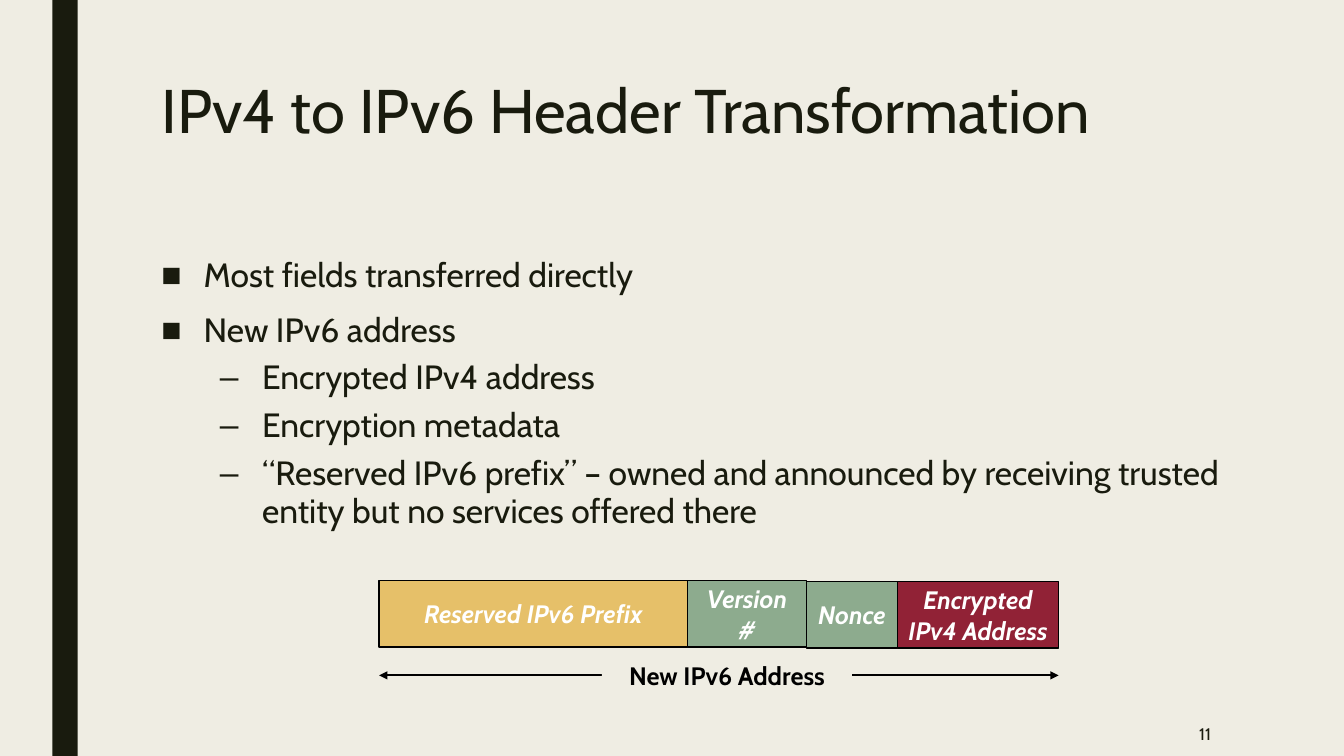
from dataclasses import dataclass

from lxml.etree import SubElement
from pptx import Presentation
from pptx.dml.color import RGBColor
from pptx.enum.shapes import MSO_CONNECTOR, MSO_SHAPE
from pptx.enum.text import MSO_ANCHOR, MSO_AUTO_SIZE, PP_ALIGN
from pptx.oxml.ns import qn
from pptx.util import Inches, Pt


@dataclass(frozen=True)
class Theme:
    font: str = "Cabin"
    paper: str = "EFEDE3"
    ink: str = "191B0E"
    black: str = "000000"
    white: str = "FFFFFF"
    gold: str = "E6C069"
    green: str = "8DAB8E"
    red: str = "912236"
    title: int = 44
    body: int = 24
    label: int = 18
    number: int = 12


THEME = Theme()

BULLETS = [
    (0, "Most fields transferred directly"),
    (0, "New IPv6 address"),
    (1, "Encrypted IPv4 address"),
    (1, "Encryption metadata"),
    (1, "“Reserved IPv6 prefix” – owned and announced by receiving trusted "
        "entity but no services offered there"),
]
# Per level: bullet character, left margin (in), space before (pt)
LEVELS = [("■", 0.42, 10), ("–", 1, 5)]
HANGING = 0.42

# Address fields: text, width, drop below the row top, fill
FIELDS = [
    ("Reserved IPv6 Prefix", 3.06, 0, THEME.gold),
    ("Version #", 1.18, 0, THEME.green),
    ("Nonce", 0.9, 0.01, THEME.green),
    ("Encrypted IPv4 Address", 1.6, 0.01, THEME.red),
]


def color(value):
    return RGBColor.from_string(value)


def add_run(p, text, size, ink, bold=False, italic=False):
    r = p.add_run()
    r.text = text
    r.font.name = THEME.font
    r.font.size = Pt(size)
    r.font.bold = bold
    r.font.italic = italic
    r.font.color.rgb = color(ink)


def place(sp, box):
    sp.left, sp.top, sp.width, sp.height = (Inches(v) for v in box)


def prepare_text(sp, anchor=MSO_ANCHOR.TOP):
    tf = sp.text_frame
    tf.word_wrap = True
    tf.auto_size = MSO_AUTO_SIZE.NONE
    tf.vertical_anchor = anchor
    return tf


def add_rect(s, box, fill, outline=None):
    sp = s.shapes.add_shape(MSO_SHAPE.RECTANGLE, *(Inches(v) for v in box))
    sp.shadow.inherit = False
    sp.fill.solid()
    sp.fill.fore_color.rgb = color(fill)
    if outline:
        sp.line.color.rgb = color(outline)
        sp.line.width = Pt(1)
    else:
        sp.line.fill.background()
    return sp


def add_title(s, box):
    sp = s.shapes.title
    place(sp, box)
    p = prepare_text(sp).paragraphs[0]
    p.alignment = PP_ALIGN.LEFT
    p.line_spacing = 0.89
    add_run(p, "IPv4 to IPv6 Header Transformation", THEME.title, THEME.ink)


def add_bullets(s, box):
    sp = s.placeholders[1]
    place(sp, box)
    tf = prepare_text(sp)
    for i, (level, text) in enumerate(BULLETS):
        p = tf.paragraphs[0] if i == 0 else tf.add_paragraph()
        char, margin, before = LEVELS[level]
        p.level = level
        p.line_spacing = 0.94
        p.space_before = Pt(before)
        p.space_after = Pt(2)
        pPr = p._p.get_or_add_pPr()
        pPr.set("marL", str(Inches(margin)))
        pPr.set("indent", str(-Inches(HANGING)))
        SubElement(pPr, qn("a:buChar")).set("char", char)
        add_run(p, text, THEME.body, THEME.ink)


def add_address_fields(s, box):
    left, top, _, height = box
    for text, width, drop, fill in FIELDS:
        sp = add_rect(s, (left, top + drop, width, height), fill, THEME.black)
        tf = prepare_text(sp, MSO_ANCHOR.MIDDLE)
        tf.margin_left = tf.margin_right = Inches(0.09)
        p = tf.paragraphs[0]
        p.alignment = PP_ALIGN.CENTER
        add_run(p, text, THEME.label, THEME.white, bold=True, italic=True)
        left += width


def add_address_span(s, box):
    left, top, width, height = box
    # Double-headed arrow across the whole address
    y = Inches(top + height / 2)
    line = s.shapes.add_connector(
        MSO_CONNECTOR.STRAIGHT, Inches(left), y, Inches(left + width), y)
    line.line.color.rgb = color(THEME.black)
    line.line.width = Pt(1.5)
    ln = line.line._get_or_add_ln()
    for end in ("a:headEnd", "a:tailEnd"):
        SubElement(ln, qn(end)).set("type", "triangle")
    SubElement(line._element.spPr, qn("a:effectLst"))

    # Label that interrupts the arrow
    sp = add_rect(s, (left + 2.21, top, 2.48, height), THEME.paper)
    p = prepare_text(sp).paragraphs[0]
    p.alignment = PP_ALIGN.CENTER
    add_run(p, "New IPv6 Address", THEME.label, THEME.black, bold=True)


def add_page_number(s, box):
    sp = s.shapes.add_textbox(*(Inches(v) for v in box))
    p = prepare_text(sp, MSO_ANCHOR.MIDDLE).paragraphs[0]
    p.alignment = PP_ALIGN.RIGHT
    add_run(p, "11", THEME.number, THEME.ink)


def main():
    prs = Presentation()
    prs.slide_width, prs.slide_height = Inches(13.33), Inches(7.5)
    s = prs.slides.add_slide(prs.slide_layouts[1])
    s.background.fill.solid()
    s.background.fill.fore_color.rgb = color(THEME.paper)

    # Side bar, heading and list
    add_rect(s, (0.52, 0, 0.25, 7.5), THEME.ink)
    add_title(s, (1.5, 0.75, 10.5, 1.62))
    add_bullets(s, (1.5, 2.5, 10.85, 3.92))

    # Address diagram
    add_address_fields(s, (3.76, 5.76, 6.74, 0.66))
    add_address_span(s, (3.76, 6.5, 6.74, 0.4))

    add_page_number(s, (10.36, 7.06, 1.75, 0.44))
    prs.save("out.pptx")


if __name__ == "__main__":
    main()
